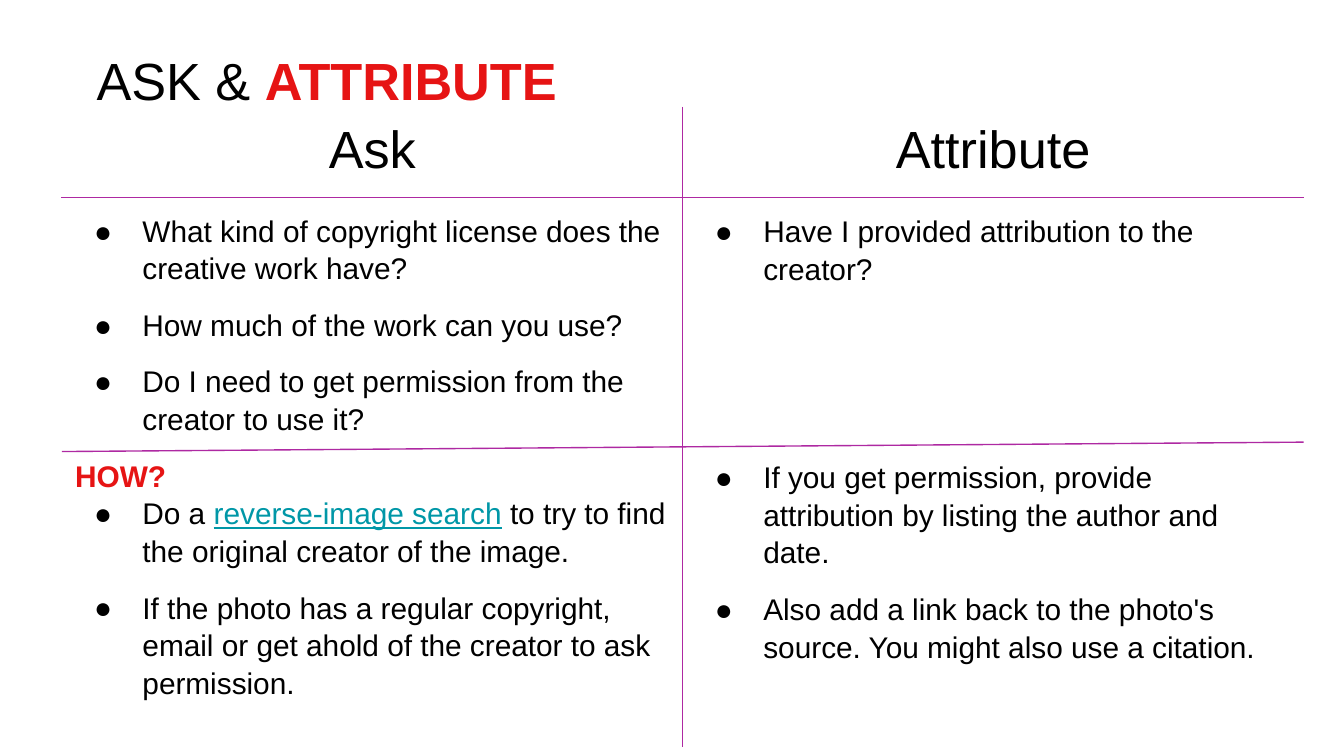
from lxml import etree
from pptx import Presentation
from pptx.dml.color import RGBColor
from pptx.enum.shapes import MSO_CONNECTOR as CONN
from pptx.enum.text import MSO_ANCHOR as ANCHOR, PP_ALIGN as ALIGN
from pptx.oxml.ns import qn
from pptx.util import Inches, Pt

BLACK, WHITE, RED, TEAL, PURPLE = "000000", "FFFFFF", "E61414", "0097A7", "AE29A2"
NO_STYLE = "{2D5ABB26-0587-4C30-8999-92F81FD0307C}"
HEADINGS = ["Ask", "Attribute"]
ASK = [
    dict(runs=[("What kind of copyright license does the creative work have?",)]),
    dict(runs=[("How much of the work can you use?",)], before=10),
    dict(runs=[("Do I need to get permission from the creator to use it?",)], before=10),
    dict(runs=[("HOW?", RED, True)], before=10, bullet=False),
    dict(runs=[("Do a ",), ("reverse-image search", TEAL, False, True),
               (" to try to find the original creator of the image.",)]),
    dict(runs=[("If the photo has a regular copyright, email or get ahold of the creator "
                "to ask permission.",)], before=10, after=10),
]
ATTRIBUTE = [
    dict(runs=[("Have I provided attribution to the creator?",)], spacing=1.15),
    dict(runs=[("If you get permission, provide attribution by listing the author and date.",)],
         before=91),
    dict(runs=[("Also add a link back to the photo's source. You might also use a citation.",)],
         before=10, after=10),
]


def rgb(value):
    """Turn a hex string into a colour."""
    return RGBColor.from_string(value)


def add_run(p, text, color=BLACK, bold=False, underline=False, size=16):
    """Append one formatted run to a paragraph."""
    r = p.add_run()
    r.text = text
    r.font.name, r.font.size = "Arial", Pt(size)
    r.font.bold, r.font.underline = bold, underline
    r.font.color.rgb = rgb(color)


def add_bullet(p):
    """Give a paragraph a hanging round bullet."""
    pPr = p._p.get_or_add_pPr()
    pPr.set("marL", str(Inches(0.5)))
    pPr.set("indent", str(Inches(-0.36)))
    color = etree.SubElement(pPr, qn("a:buClr"))
    etree.SubElement(color, qn("a:srgbClr"), val=BLACK)
    etree.SubElement(pPr, qn("a:buSzPts"), val="1600")
    etree.SubElement(pPr, qn("a:buFont"), typeface="Arial")
    etree.SubElement(pPr, qn("a:buChar"), char="●")


def set_margins(box):
    """Set equal margins on a cell or text frame."""
    box.margin_left = box.margin_right = box.margin_top = box.margin_bottom = Inches(0.1)


def style_cell(cell, row, col):
    """Draw purple inner borders and white outer ones, without a fill."""
    set_margins(cell)
    tcPr = cell._tc.get_or_add_tcPr()
    inner = {"lnL": col == 1, "lnR": col == 0, "lnT": row == 1, "lnB": row == 0}
    for side, is_inner in inner.items():
        ln = etree.SubElement(tcPr, qn(f"a:{side}"), w=str(Pt(0.75)), cap="flat", cmpd="sng")
        fill = etree.SubElement(ln, qn("a:solidFill"))
        etree.SubElement(fill, qn("a:srgbClr"), val=PURPLE if is_inner else WHITE)
        etree.SubElement(ln, qn("a:prstDash"), val="solid")
    cell.fill.background()


def fill_list(tf, items):
    """Write the paragraphs of one column."""
    for i, item in enumerate(items):
        p = tf.add_paragraph() if i else tf.paragraphs[0]
        p.line_spacing = item.get("spacing", 1.14)
        p.space_before = Pt(item.get("before", 0))
        p.space_after = Pt(item.get("after", 0))
        if item.get("bullet", True):
            add_bullet(p)
        for run in item["runs"]:
            add_run(p, *run)


def add_title(s, x, y, w, h):
    """Add the two-colour title."""
    tf = s.shapes.add_textbox(Inches(x), Inches(y), Inches(w), Inches(h)).text_frame
    tf.word_wrap = True
    tf.vertical_anchor = ANCHOR.MIDDLE
    set_margins(tf)
    p = tf.paragraphs[0]
    add_run(p, "ASK & ", size=28)
    add_run(p, "ATTRIBUTE", RED, True, size=28)


def add_columns(s, x, y, w, h):
    """Add the two-column table and the line that divides its lists."""
    head = 0.57
    frame = s.shapes.add_table(2, 2, Inches(x), Inches(y), Inches(w), Inches(h))
    table = frame.table
    table._tbl.tblPr.find(qn("a:tableStyleId")).text = NO_STYLE
    table.first_row = table.horz_banding = False
    table.rows[0].height, table.rows[1].height = Inches(head), Inches(h - head)
    for col, (heading, items) in enumerate(zip(HEADINGS, [ASK, ATTRIBUTE])):
        table.columns[col].width = Inches(w / 2)
        for row in range(2):
            style_cell(table.cell(row, col), row, col)
        p = table.cell(0, col).text_frame.paragraphs[0]
        p.alignment = ALIGN.CENTER
        add_run(p, heading, size=28)
        fill_list(table.cell(1, col).text_frame, items)
    frame.width = frame.height = Inches(3.28)
    line = s.shapes.add_connector(CONN.STRAIGHT, Inches(x), Inches(y + 2.56),
                                  Inches(x + w), Inches(y + 2.49))
    line.line.color.rgb = rgb(PURPLE)
    line.line.width = Pt(0.75)
    etree.SubElement(line._element.spPr, qn("a:effectLst"))


def main():
    """Build the slide and save it."""
    prs = Presentation()
    prs.slide_width = Inches(10)
    prs.slide_height = prs.slide_width * 9 // 16
    s = prs.slides.add_slide(prs.slide_layouts[6])
    s.background.fill.solid()
    s.background.fill.fore_color.rgb = rgb(WHITE)
    add_title(s, 0.62, 0.21, 6.1, 0.76)
    add_columns(s, 0.46, 0.8, 9.24, 4.51)
    prs.save("out.pptx")


if __name__ == "__main__":
    main()
